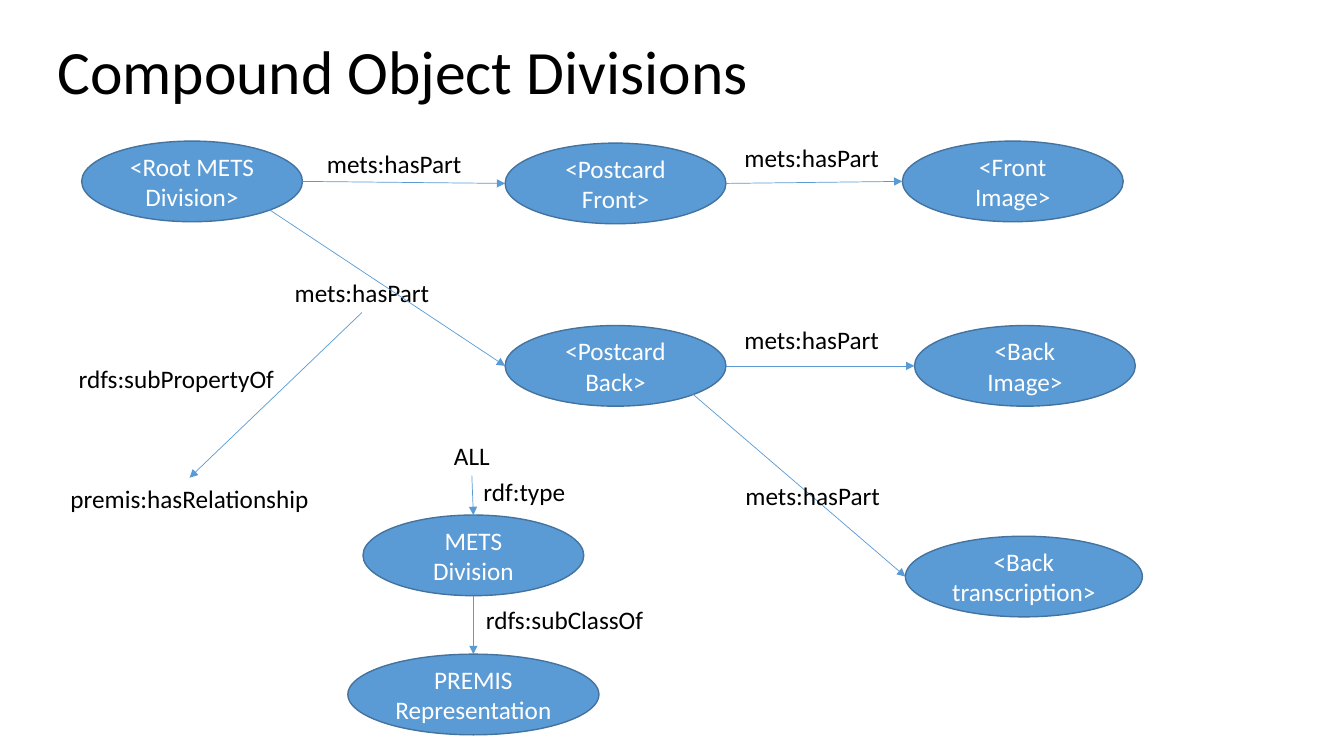
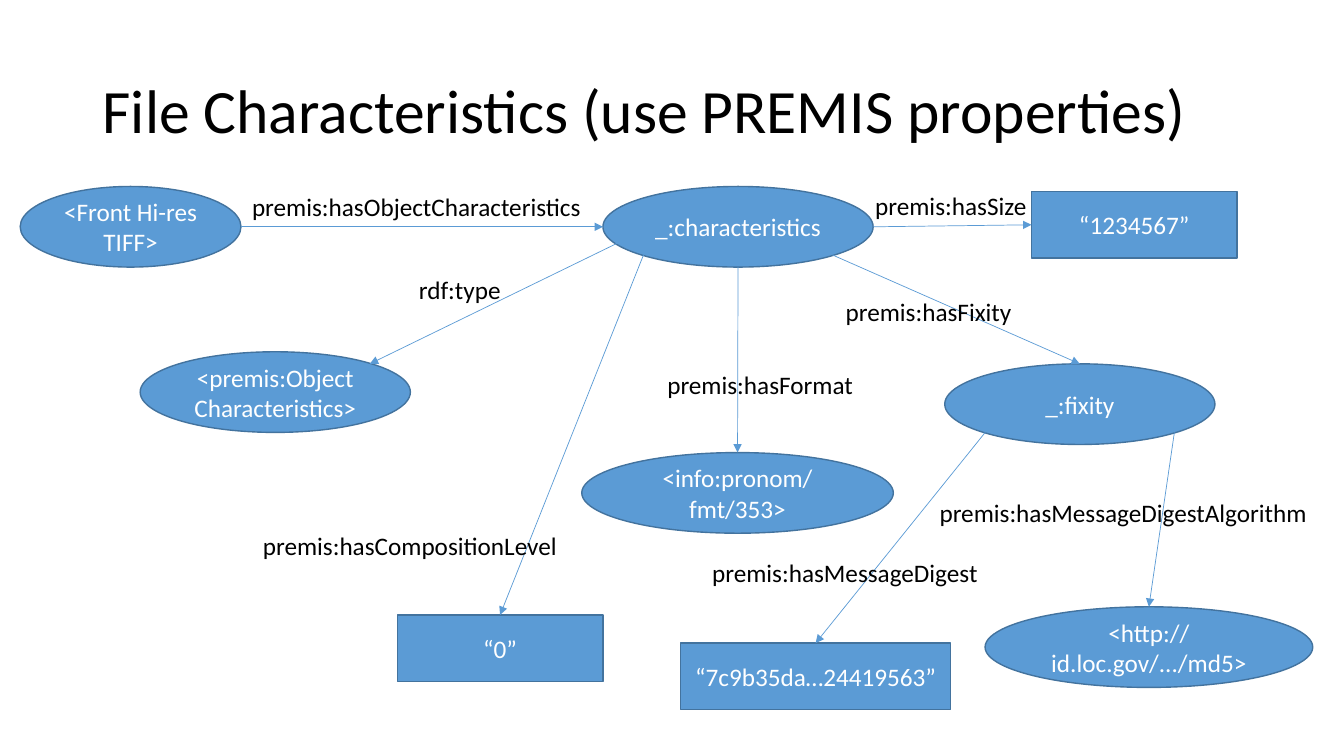
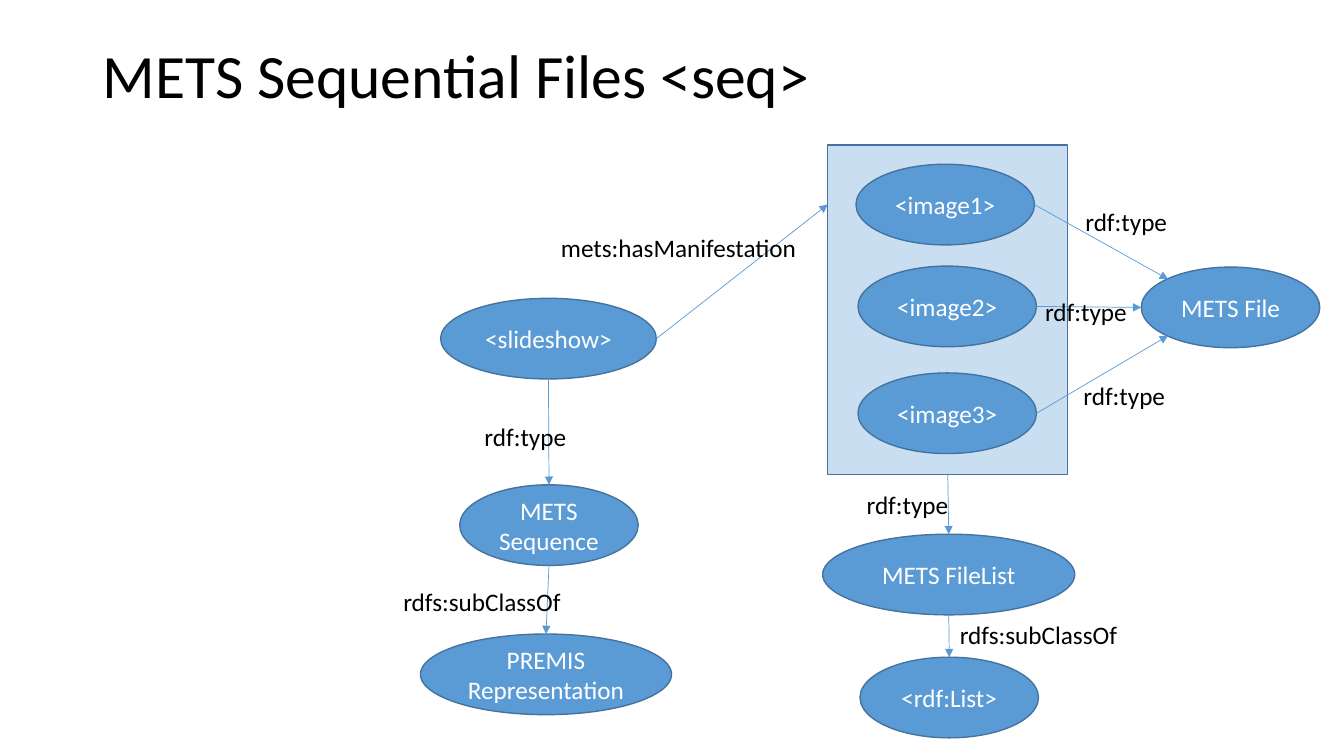
"""Build three slides of METS and PREMIS relationship diagrams."""
from lxml import etree
from pptx import Presentation
from pptx.dml.color import RGBColor
from pptx.enum.shapes import MSO_CONNECTOR, MSO_SHAPE
from pptx.enum.text import MSO_ANCHOR, PP_ALIGN
from pptx.oxml.ns import qn
from pptx.util import Inches, Pt

COLORS = {"node": "5B9BD5", "outline": "43739E", "dark": "000000", "light": "FFFFFF"}
FONT = "Calibri"
PANEL_ALPHA = "32000"
HEIGHTS = {"oval": 0.8, "box": 0.66, "text": 0.4, "panel": 3.27}
LABEL_WIDTHS = {
    "mets:hasPart": 1.82,
    "rdfs:subPropertyOf": 2.16,
    "rdf:type": 1.02,
    "rdfs:subClassOf": 1.78,
    "premis:hasObjectCharacteristics": 3.5,
    "premis:hasCompositionLevel": 3.15,
    "premis:hasFormat": 2.06,
    "premis:hasSize": 1.72,
    "premis:hasFixity": 1.86,
    "premis:hasMessageDigest": 2.86,
    "premis:hasMessageDigestAlgorithm": 3.88,
    "mets:hasManifestation": 2.56,
}
NEAR, FAR = 0.15, 0.85
SIDES = {
    "top": (0.5, 0), "bottom": (0.5, 1), "left": (0, 0.5), "right": (1, 0.5),
    "top left": (NEAR, NEAR), "top right": (FAR, NEAR),
    "bottom left": (NEAR, FAR), "bottom right": (FAR, FAR),
    "lower left": (0.08, 0.66), "upper left": (0, 0.18),
}

SLIDES = [
    {
        "title": ("Compound Object Divisions", 0.47, 0.34, 0.79),
        "nodes": {
            "root": ("oval", "<Root METS Division>", 0.81, 1.4, 2.19),
            "front": ("oval", "<Postcard Front>", 5.01, 1.42, 2.19),
            "back": ("oval", "<Postcard Back>", 5.01, 3.23, 2.19),
            "front image": ("oval", "<Front Image>", 8.95, 1.4, 2.19),
            "back image": ("oval", "<Back Image>", 9.07, 3.23, 2.19),
            "transcription": ("oval", "<Back transcription>", 8.98, 5.32, 2.35),
            "has part": ("text", "mets:hasPart", 2.68, 2.7, 1.82),
            "relationship": ("text", "premis:hasRelationship", 0.23, 4.74, 3.3),
            "all": ("text", "ALL", 4.4, 4.32, 0.56),
            "division": ("oval", "METS Division", 3.6, 5.11, 2.19),
            "representation": ("oval", "PREMIS Representation", 3.45, 6.49, 2.49),
        },
        "arrows": [
            ("root", "right", "front", "left"),
            ("root", "bottom right", "back", "left"),
            ("front", "right", "front image", "left"),
            ("back", "right", "back image", "left"),
            ("back", "bottom right", "transcription", "left"),
            ("has part", "bottom", "relationship", "top"),
            ("all", "bottom", "division", "top"),
            ("division", "bottom", "representation", "top"),
        ],
        "labels": [
            ("mets:hasPart", 3, 1.42),
            ("mets:hasPart", 7.14, 1.36),
            ("mets:hasPart", 7.14, 3.17),
            ("mets:hasPart", 7.15, 4.72),
            ("rdfs:subPropertyOf", 0.67, 3.55),
            ("rdf:type", 4.69, 4.68),
            ("rdfs:subClassOf", 4.71, 5.95),
        ],
    },
    {
        "title": ("File Characteristics (use PREMIS properties)", 0.92, 0.4, 1.45),
        "nodes": {
            "file": ("oval", "<Front Hi-res TIFF>", 0.2, 1.85, 2.19),
            "characteristics": ("oval", "_:characteristics", 5.98, 1.85, 2.68),
            "level": ("box", "“0”", 3.94, 6.1, 2.04),
            "format": ("oval", "<info:pronom/fmt/353>", 5.77, 4.49, 3.09),
            "size": ("box", "“1234567”", 10.23, 1.9, 2.04),
            "fixity": ("oval", "_:fixity", 9.37, 3.61, 2.68),
            "digest": ("box", "“7c9b35da…24419563”", 6.75, 6.38, 2.68),
            "algorithm": ("oval", "<http://id.loc.gov/.../md5>", 9.77, 6.02, 3.25),
            "class": ("oval", "<premis:Object Characteristics>", 1.39, 3.49, 2.68),
        },
        "arrows": [
            ("file", "right", "characteristics", "left"),
            ("characteristics", "bottom left", "level", "top"),
            ("characteristics", "bottom", "format", "top"),
            ("characteristics", "right", "size", "left"),
            ("characteristics", "bottom right", "fixity", "top"),
            ("characteristics", "lower left", "class", "top right"),
            ("fixity", "bottom left", "digest", "top"),
            ("fixity", "bottom right", "algorithm", "top"),
        ],
        "labels": [
            ("premis:hasObjectCharacteristics", 2.38, 1.85),
            ("premis:hasCompositionLevel", 2.49, 5.21),
            ("premis:hasFormat", 6.51, 3.61),
            ("premis:hasSize", 8.57, 1.84),
            ("premis:hasFixity", 8.28, 2.89),
            ("premis:hasMessageDigest", 6.95, 5.48),
            ("premis:hasMessageDigestAlgorithm", 9.2, 4.88),
            ("rdf:type", 4.05, 2.67),
        ],
    },
    {
        "title": ("METS Sequential Files <seq>", 0.92, 0.11, 1.33),
        "nodes": {
            "panel": ("panel", "", 8.21, 1.44, 2.38),
            "slideshow": ("oval", "<slideshow>", 4.37, 2.96, 2.14),
            "image1": ("oval", "<image1>", 8.49, 1.63, 1.77),
            "image2": ("oval", "<image2>", 8.51, 2.64, 1.77),
            "image3": ("oval", "<image3>", 8.51, 3.7, 1.77),
            "file": ("oval", "METS File", 11.32, 2.65, 1.77),
            "sequence": ("oval", "METS Sequence", 4.56, 4.81, 1.77),
            "representation": ("oval", "PREMIS Representation", 4.17, 6.29, 2.49),
            "file list": ("oval", "METS FileList", 8.16, 5.3, 2.5),
            "list": ("oval", "<rdf:List>", 8.53, 6.52, 1.77),
        },
        "arrows": [
            ("slideshow", "right", "panel", "upper left"),
            ("image1", "right", "file", "top left"),
            ("image2", "right", "file", "left"),
            ("image3", "right", "file", "bottom left"),
            ("slideshow", "bottom", "sequence", "top"),
            ("sequence", "bottom", "representation", "top"),
            ("panel", "bottom", "file list", "top"),
            ("file list", "bottom", "list", "top"),
        ],
        "labels": [
            ("rdf:type", 10.66, 2),
            ("rdf:type", 10.26, 2.89),
            ("rdf:type", 10.64, 3.72),
            ("rdf:type", 4.7, 4.13),
            ("rdf:type", 8.49, 4.8),
            ("mets:hasManifestation", 5.45, 2.25),
            ("rdfs:subClassOf", 3.89, 5.77),
            ("rdfs:subClassOf", 9.41, 6.09),
        ],
    },
]


def color(name):
    return RGBColor.from_string(COLORS[name])


def write(shape, text, size, color_name, alignment, wrap=True):
    frame = shape.text_frame
    frame.text = text
    frame.word_wrap = wrap
    frame.vertical_anchor = MSO_ANCHOR.MIDDLE
    paragraph = frame.paragraphs[0]
    paragraph.alignment = alignment
    for run in paragraph.runs:
        run.font.name = FONT
        run.font.size = Pt(size)
        run.font.color.rgb = color(color_name)
    return paragraph


def add_title(slide, text, left, top, height):
    box = slide.shapes.add_textbox(Inches(left), Inches(top), Inches(11.5), Inches(height))
    write(box, text, 44, "dark", PP_ALIGN.LEFT).line_spacing = 0.9


def add_label(slide, text, left, top, width):
    box = slide.shapes.add_textbox(
        Inches(left), Inches(top), Inches(width), Inches(HEIGHTS["text"]))
    write(box, text, 18, "dark", PP_ALIGN.CENTER, wrap=False)


def add_node(slide, kind, text, left, top, width):
    if kind == "text":
        add_label(slide, text, left, top, width)
        return
    preset = MSO_SHAPE.OVAL if kind == "oval" else MSO_SHAPE.RECTANGLE
    shape = slide.shapes.add_shape(
        preset, Inches(left), Inches(top), Inches(width), Inches(HEIGHTS[kind]))
    shape.shadow.inherit = False
    shape.fill.solid()
    shape.fill.fore_color.rgb = color("node")
    shape.line.color.rgb = color("outline")
    shape.line.width = Pt(1)
    if kind == "panel":
        fill_color = shape.fill._xPr.find(qn("a:solidFill"))[0]
        etree.SubElement(fill_color, qn("a:alpha"), val=PANEL_ALPHA)
    else:
        write(shape, text, 18, "light", PP_ALIGN.CENTER)


def anchor(node, side):
    kind, _, left, top, width = node
    across, down = SIDES[side]
    return Inches(left + across * width), Inches(top + down * HEIGHTS[kind])


def add_arrow(slide, start, end):
    connector = slide.shapes.add_connector(MSO_CONNECTOR.STRAIGHT, *start, *end)
    connector.line.color.rgb = color("node")
    connector.line.width = Pt(0.5)
    etree.SubElement(connector.line._get_or_add_ln(), qn("a:tailEnd"), type="triangle")
    etree.SubElement(connector._element.spPr, qn("a:effectLst"))


def main():
    presentation = Presentation()
    presentation.slide_width = Inches(13.33)
    presentation.slide_height = Inches(7.5)
    for content in SLIDES:
        slide = presentation.slides.add_slide(presentation.slide_layouts[6])
        add_title(slide, *content["title"])
        nodes = content["nodes"]
        for node in nodes.values():
            add_node(slide, *node)
        for source, source_side, target, target_side in content["arrows"]:
            add_arrow(slide, anchor(nodes[source], source_side),
                      anchor(nodes[target], target_side))
        for text, left, top in content["labels"]:
            add_label(slide, text, left, top, LABEL_WIDTHS[text])
    presentation.save("out.pptx")


if __name__ == "__main__":
    main()
